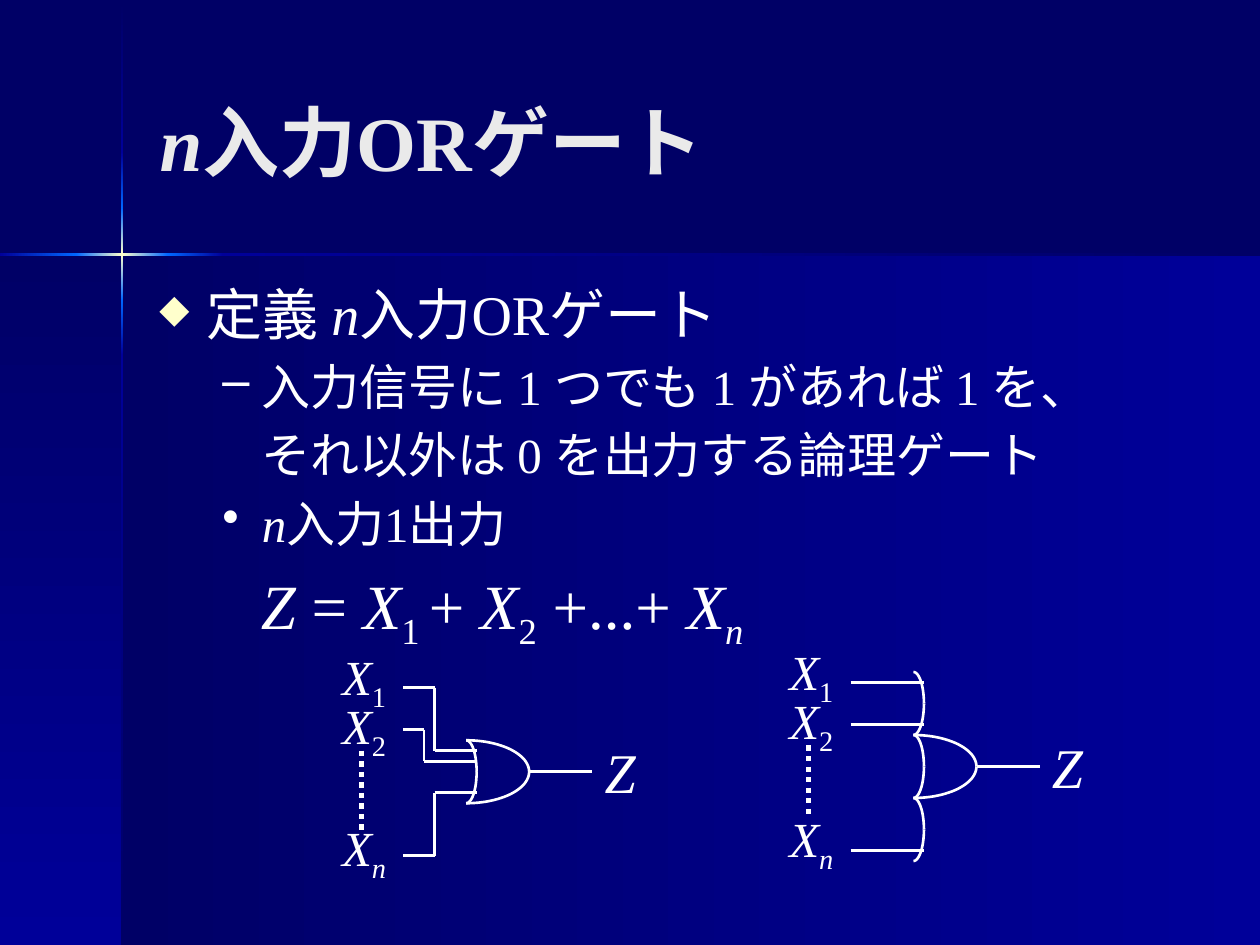
from copy import deepcopy
from itertools import pairwise
from math import cos, pi, sin

from lxml import etree
from pptx import Presentation
from pptx import util as u
from pptx.dml.color import RGBColor
from pptx.enum import dml, shapes, text
from pptx.oxml.ns import qn

COLORS = {"navy": "000066", "blue": "000099", "azure": "0066FF",
          "cream": "FFFFCC", "title": "EAEAEA", "white": "FFFFFF"}
FONT = "Times New Roman"


def rgb(name):
    return RGBColor.from_string(COLORS[name])


class Deck:
    def __init__(self):
        self.prs = Presentation()
        self.prs.slide_width, self.prs.slide_height = u.Pt(720), u.Pt(540)
        self.slide = self.prs.slides.add_slide(self.prs.slide_layouts[5])
        bg = self.slide.background.fill
        bg.solid()
        bg.fore_color.rgb = rgb("navy")
        self.shapes = self.slide.shapes

    def group(self):
        """Send the following elements to a new group."""
        self.shapes = self.slide.shapes.add_group_shape().shapes

    def ungroup(self):
        self.shapes = self.slide.shapes

    def gradient(self, x, y, w, h, names, down=False):
        """Rectangle filled from left to right, or from top to bottom."""
        sp = self.shapes.add_shape(shapes.MSO_SHAPE.RECTANGLE, *map(u.Pt, (x, y, w, h)))
        sp.shadow.inherit = False
        sp.line.fill.background()
        sp.fill.gradient()
        sp.fill.gradient_angle = 270 if down else 0
        stops = sp.fill._fill._gradFill.find(qn("a:gsLst"))
        while len(stops) < len(names):
            stops.append(deepcopy(stops[0]))
        for i, (stop, name) in enumerate(zip(sp.fill.gradient_stops, names)):
            stop.position = i / (len(names) - 1)
            stop.color.rgb = rgb(name)

    def fill_paragraph(self, p, parts, size, color="white", bold=False):
        """Parts are (text, flags): i for italic, s for subscript."""
        for words, flags in parts:
            r = p.add_run()
            r.text = words
            r.font.name, r.font.size, r.font.bold = FONT, u.Pt(size), bold
            r.font.italic = "i" in flags
            r.font.color.rgb = rgb(color)
            if "s" in flags:
                r._r.get_or_add_rPr().set("baseline", "-25000")

    def title(self, x, y, w, h, parts):
        sp = self.slide.shapes.title
        sp.left, sp.top, sp.width, sp.height = map(u.Pt, (x, y, w, h))
        tf = sp.text_frame
        tf.vertical_anchor = text.MSO_ANCHOR.MIDDLE
        p = tf.paragraphs[0]
        p.alignment = text.PP_ALIGN.LEFT
        self.fill_paragraph(p, parts, 44, "title", True)

    def label(self, x, y, w, h, parts, size):
        tf = self.shapes.add_textbox(*map(u.Pt, (x, y, w, h))).text_frame
        tf.word_wrap = False
        tf.auto_size = text.MSO_AUTO_SIZE.SHAPE_TO_FIT_TEXT
        self.fill_paragraph(tf.paragraphs[0], parts, size)

    def body(self, x, y, w, h, items):
        """Items are (parts, size, margin, hanging, bullet, bullet colour, bullet %)."""
        tf = self.shapes.add_textbox(*map(u.Pt, (x, y, w, h))).text_frame
        tf.word_wrap = True
        for i, (parts, size, margin, hanging, bullet, color, percent) in enumerate(items):
            p = tf.add_paragraph() if i else tf.paragraphs[0]
            pPr = p._p.get_or_add_pPr()
            pPr.set("marL", str(u.Pt(margin)))
            pPr.set("indent", str(-u.Pt(hanging)))
            if bullet:
                clr = etree.SubElement(pPr, qn("a:buClr"))
                etree.SubElement(clr, qn("a:srgbClr"), val=COLORS[color])
                etree.SubElement(pPr, qn("a:buSzPct"), val=str(percent * 1000))
                etree.SubElement(pPr, qn("a:buChar"), char=bullet)
            if i:
                p.space_before = u.Pt(size * 0.2)
            self.fill_paragraph(p, parts, size)

    def line(self, start, end, width=1.5, dash=None):
        c = self.shapes.add_connector(shapes.MSO_CONNECTOR.STRAIGHT,
                                      *map(u.Pt, (*start, *end)))
        c.line.color.rgb, c.line.width = rgb("white"), u.Pt(width)
        if dash:
            c.line.dash_style = dash
        etree.SubElement(c._element.spPr, qn("a:effectLst"))

    def bow(self, x, y, rx, ry=18, steps=24):
        """Right half of an ellipse centred on x, y, in two quarters."""
        for side in (-1, 1):
            points = [(u.Pt(x + rx * sin(t)), u.Pt(y + side * ry * cos(t)))
                      for t in (pi / 2 * i / steps for i in range(steps + 1))]
            fb = self.shapes.build_freeform(*points[0])
            fb.add_line_segments(points[1:], close=False)
            sp = fb.convert_to_shape()
            sp.shadow.inherit = False
            sp.fill.background()
            sp.line.color.rgb, sp.line.width = rgb("white"), u.Pt(1.5)

    def or_gate(self, x, y, wires, backs, last_y, dots_end):
        """Gate whose back is centred on x, y; other places are offsets."""
        self.group()
        for sub, flags, dy in (("1", "s", -75), ("2", "s", -47), ("n", "is", last_y)):
            self.label(x - 78, y + dy, 41, 41, [("X", "i"), (sub, flags)], 28)
        self.label(x + 72, y - 23, 32, 45, [("Z", "i")], 32)
        self.line((x + 36, y), (x + 72, y))
        for wire in wires:
            for a, b in pairwise((x + dx, y + dy) for dx, dy in wire):
                self.line(a, b)
        self.line((x - 60, y - 12), (x - 60, y + dots_end), 3, dml.MSO_LINE.ROUND_DOT)
        self.bow(x, y, 36)
        for dy in backs:
            self.bow(x, y + dy, 6)
        self.ungroup()


def backdrop(deck):
    deck.group()
    deck.gradient(70, 145.5, 650, 394.5, ("navy", "blue"))
    deck.gradient(0, 145.5, 70, 394.5, ("navy", "blue"), down=True)
    ramps = [("navy", "blue"), ("blue", "azure"), ("azure", "cream", "azure"),
             ("azure", "blue"), ("blue", "navy")]
    for (a, b), names in zip(pairwise((0.7, 87, 119, 171.5, 203, 540)), ramps):
        deck.gradient(69, a, 1.4, b - a, names, down=True)
    for (a, b), names in zip(pairwise((0, 43.5, 96, 127.5, 720)), ramps[1:]):
        deck.gradient(a, 144.7, b - a, 1.4, names)
    deck.ungroup()


def main():
    deck = Deck()
    backdrop(deck)
    deck.title(84, 24, 594, 113, [("n", "i"), ("入力ORゲート", "")])
    deck.body(84, 156, 594, 222, [
        ([("定義 ", ""), ("n", "i"), ("入力ORゲート", "")], 32, 27, 27, "◆", "cream", 70),
        ([("入力信号に 1 つでも 1 があれば 1 を、", "")], 28, 58.5, 22.5, "–", "white", 100),
        ([("それ以外は 0 を出力する論理ゲート", "")], 28, 58.5, 0, None, None, None),
        ([("n", "i"), ("入力1出力", "")], 28, 58.5, 22.5, "•", "white", 100),
    ])

    bent = [[(-36, start), (bend, start), (bend, end), (6, end)]
            for start, bend, end in ((-48, -18, -12), (-24, -24, -6), (48, -18, 12))]
    straight = [[(-36, dy), (6, dy)] for dy in (-48, -24, 48)]
    deck.or_gate(266.4, 441, bent, (0,), 22.5, 36)
    deck.or_gate(522, 438, straight, (-36, 0, 36), 20.5, 30)

    deck.label(142, 320, 301, 51, [
        ("Z", "i"), (" = ", ""), ("X", "i"), ("1 ", "s"), ("+ ", ""), ("X", "i"),
        ("2", "s"), (" +...+ ", ""), ("X", "i"), ("n", "is")], 36)
    deck.prs.save("out.pptx")


if __name__ == "__main__":
    main()
